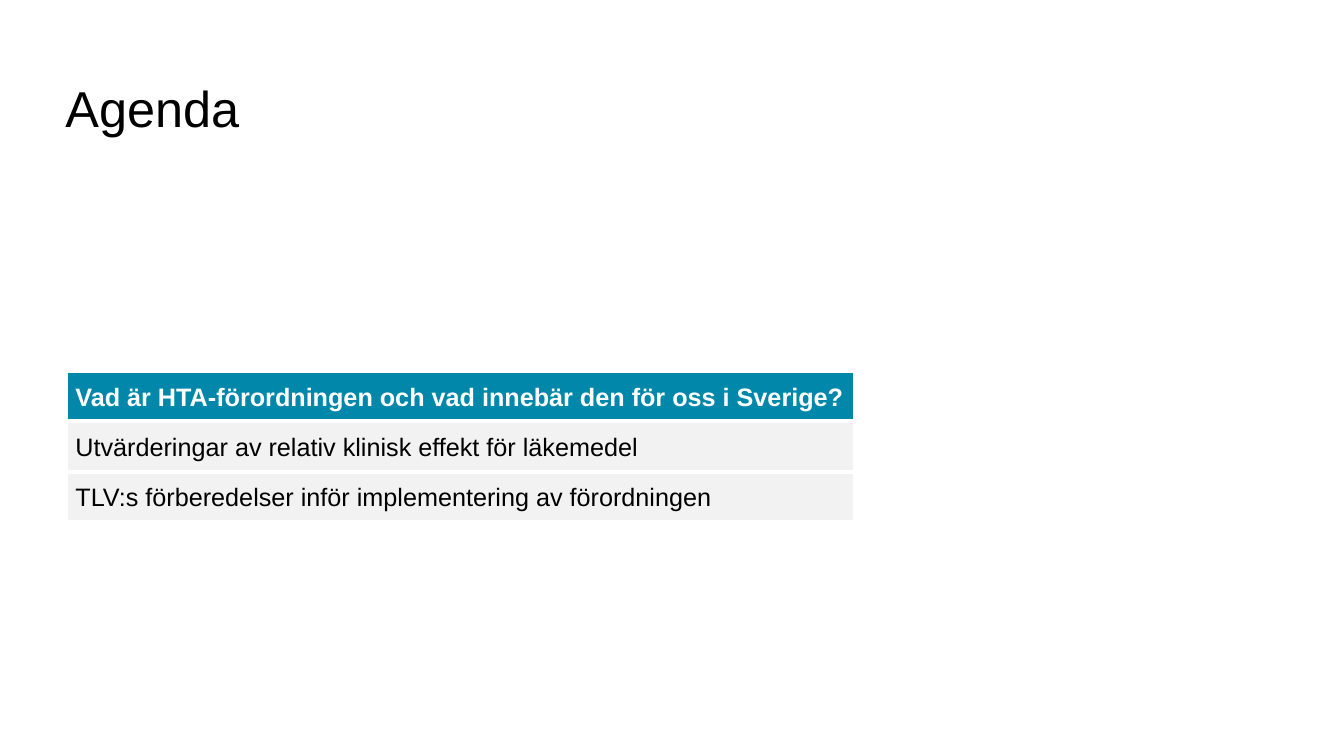
from dataclasses import dataclass

import pptx
import pptx.dml.color
import pptx.enum.shapes
import pptx.enum.text
import pptx.util

Inches = pptx.util.Inches
RGB = pptx.dml.color.RGBColor.from_string


@dataclass(frozen=True)
class Theme:
    font: str = "Arial"
    text: str = "000000"
    white: str = "FFFFFF"
    active: str = "0087A9"
    inactive: str = "F2F2F2"
    title_size: int = 36
    item_size: int = 18
    border: int = 3


THEME = Theme()
AGENDA = [
    "Vad är HTA-förordningen och vad innebär den för oss i Sverige?",
    "Utvärderingar av relativ klinisk effekt för läkemedel",
    "TLV:s förberedelser inför implementering av förordningen",
]


def set_text(sp, text, size, color, margins, bold=False):
    """Fill a shape with one left-aligned, vertically centred line."""
    tf = sp.text_frame
    tf.text = text
    tf.word_wrap = True
    tf.vertical_anchor = pptx.enum.text.MSO_ANCHOR.MIDDLE
    tf.margin_left, tf.margin_top, tf.margin_right, tf.margin_bottom = map(Inches, margins)
    p = tf.paragraphs[0]
    p.alignment = pptx.enum.text.PP_ALIGN.LEFT
    font = p.runs[0].font
    font.name = THEME.font
    font.size = pptx.util.Pt(size)
    font.bold = bold
    font.color.rgb = RGB(color)


def add_title(slide, text, left, top, width, height):
    sp = slide.shapes.add_textbox(*map(Inches, (left, top, width, height)))
    set_text(sp, text, THEME.title_size, THEME.text, (0, 0, 0, 0))


def add_agenda(slide, items, active, left, top, width, height):
    """Stack equal bars in the box and highlight the active item."""
    bar_height = height / len(items)
    for i, item in enumerate(items):
        current = i == active
        sp = slide.shapes.add_shape(
            pptx.enum.shapes.MSO_SHAPE.RECTANGLE,
            *map(Inches, (left, top + i * bar_height, width, bar_height)))
        sp.shadow.inherit = False
        sp.fill.solid()
        sp.fill.fore_color.rgb = RGB(THEME.active if current else THEME.inactive)
        sp.line.color.rgb = RGB(THEME.white)
        sp.line.width = pptx.util.Pt(THEME.border)
        set_text(sp, item, THEME.item_size, THEME.white if current else THEME.text,
                 (0.1, 0.1, 0, 0.1), bold=current)


def main():
    prs = pptx.Presentation()
    prs.slide_width, prs.slide_height = Inches(13.33), Inches(7.5)
    slide = prs.slides.add_slide(prs.slide_layouts[6])

    # Title
    add_title(slide, "Agenda", 0.65, 0.66, 12.03, 0.81)

    # Agenda bars
    add_agenda(slide, AGENDA, 0, 0.65, 3.68, 7.83, 1.5)

    prs.save("out.pptx")


if __name__ == "__main__":
    main()
